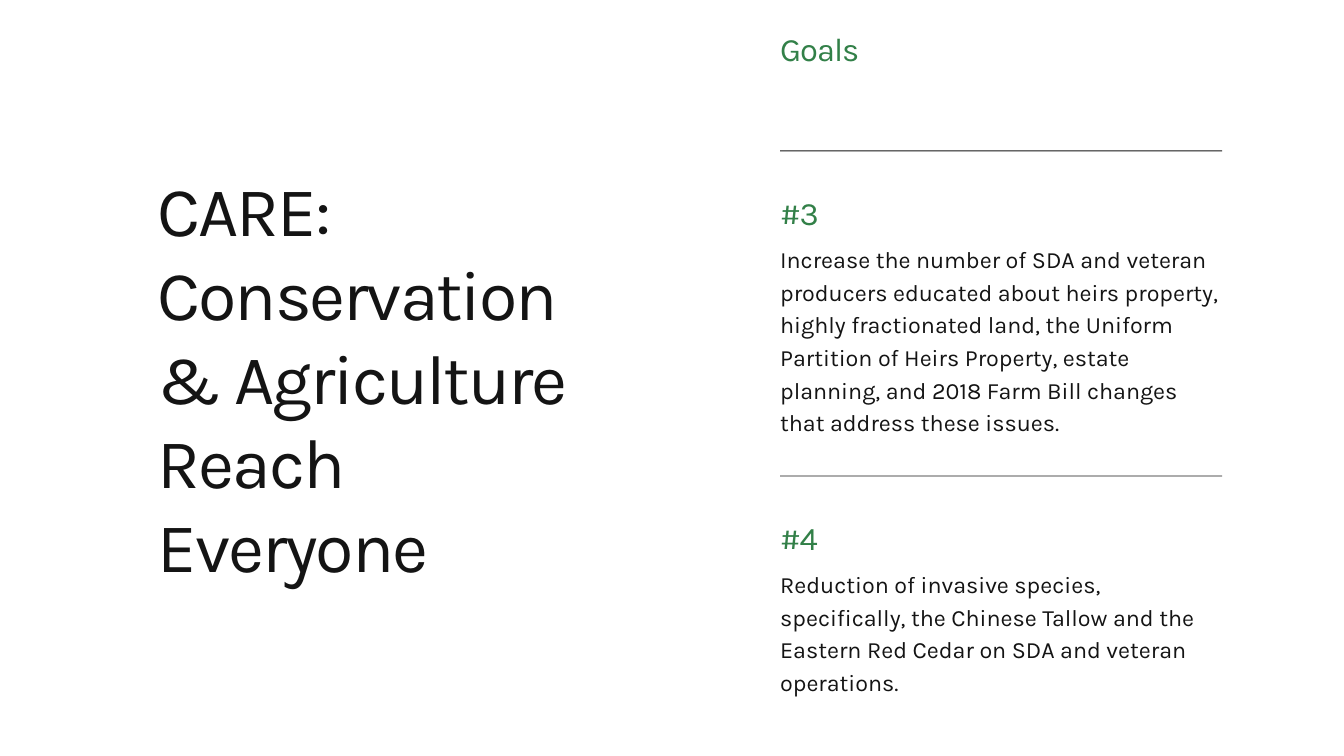
from pptx import Presentation
from pptx.dml.color import RGBColor
from pptx.enum.shapes import MSO_SHAPE
from pptx.enum.text import MSO_ANCHOR, MSO_AUTO_SIZE, PP_ALIGN
from pptx.util import Cm, Pt

COLORS = {"ink": "141414", "green": "328048", "background": "FFFFFF"}
FORMATS = {
    "title": {"size": 75, "line": 90, "color": "ink", "tracking": -220},
    "heading": {"size": 35, "line": 42, "color": "green", "tracking": -110},
    "body": {"size": 25, "line": 35, "color": "ink", "tracking": 0},
}
FRAME = {
    "margin_left": 0,
    "margin_top": 0,
    "margin_right": 0,
    "margin_bottom": 0,
    "word_wrap": True,
    "auto_size": MSO_AUTO_SIZE.SHAPE_TO_FIT_TEXT,
    "vertical_anchor": MSO_ANCHOR.TOP,
}
COLUMN_LEFT, COLUMN_WIDTH = 29.49, 16.71
GOALS = [
    (5.69, 7.26, "#3",
     "Increase the number of SDA and veteran producers educated about heirs "
     "property, highly fractionated land, the Uniform Partition of Heirs "
     "Property, estate planning, and 2018 Farm Bill changes that address "
     "these issues."),
    (17.98, 4.83, "#4",
     "Reduction of invasive species, specifically, the Chinese Tallow and the "
     "Eastern Red Cedar on SDA and veteran operations."),
]


class SlideBuilder:
    """Holds the font and the slide being filled."""

    def __init__(self, slide, font="Karla"):
        self.slide = slide
        self.font = font

    def color(self, name):
        return RGBColor.from_string(COLORS[name])

    def background(self):
        fill = self.slide.background.fill
        fill.solid()
        fill.fore_color.rgb = self.color("background")

    def fill_text(self, shape, text, style):
        """Fill a text shape with one paragraph in the named format."""
        values = FORMATS[style]
        frame = shape.text_frame
        for name, value in FRAME.items():
            setattr(frame, name, value)
        paragraph = frame.paragraphs[0]
        paragraph.alignment = PP_ALIGN.LEFT
        paragraph.line_spacing = Pt(values["line"])
        run = paragraph.add_run()
        run.text = text
        run.font.name = self.font
        run.font.size = Pt(values["size"])
        run.font.color.rgb = self.color(values["color"])
        run.font._element.set("spc", str(values["tracking"]))

    def title(self, text, left, top, width, height):
        shape = self.slide.shapes.title
        box = {"left": left, "top": top, "width": width, "height": height}
        for name, value in box.items():
            setattr(shape, name, Cm(value))
        self.fill_text(shape, text, "title")

    def text(self, text, style, left, top, width, height):
        shape = self.slide.shapes.add_textbox(
            Cm(left), Cm(top), Cm(width), Cm(height))
        self.fill_text(shape, text, style)

    def heading(self, text, top):
        self.text(text, "heading", COLUMN_LEFT, top, 4.14, 1.52)

    def rule(self, top):
        """Draw a thin bar across the goals column."""
        shape = self.slide.shapes.add_shape(
            MSO_SHAPE.RECTANGLE,
            Cm(COLUMN_LEFT), Cm(top), Cm(COLUMN_WIDTH), Cm(0.03))
        shape.shadow.inherit = False
        shape.fill.solid()
        shape.fill.fore_color.rgb = self.color("ink")
        shape.line.fill.background()

    def goal(self, top, body_height, number, text):
        self.rule(top)
        self.heading(number, top + 1.61)
        self.text(text, "body", COLUMN_LEFT, top + 3.4,
                  COLUMN_WIDTH, body_height)


def main():
    presentation = Presentation()
    presentation.slide_width = Cm(50.8)
    presentation.slide_height = Cm(28.58)
    title_only = presentation.slide_layouts[5]
    builder = SlideBuilder(presentation.slides.add_slide(title_only))
    builder.background()
    builder.title("CARE: Conservation & Agriculture Reach Everyone",
                  5.97, 6.3, 16.46, 15.93)
    builder.heading("Goals", 1.09)
    for goal in GOALS:
        builder.goal(*goal)
    presentation.save("out.pptx")


if __name__ == "__main__":
    main()
